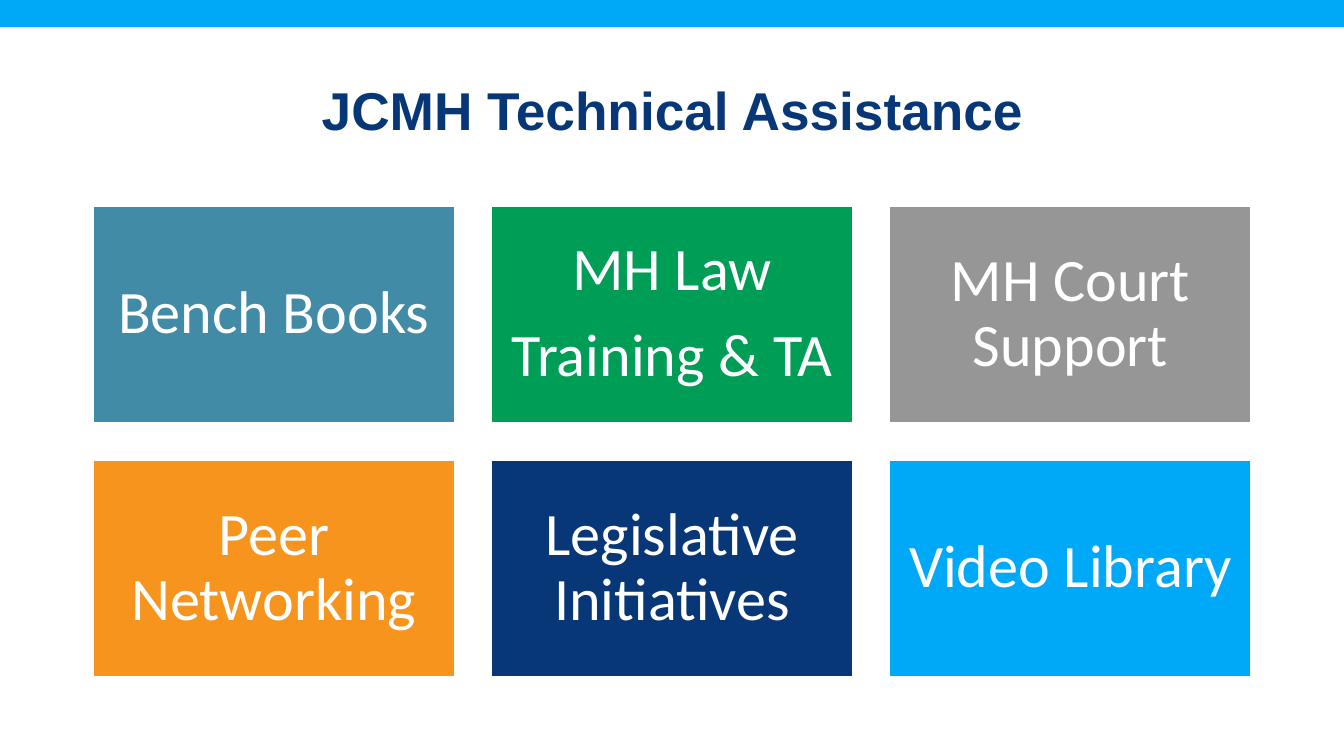
import pptx
import pptx.util
from pptx.dml.color import RGBColor
from pptx.enum.shapes import MSO_SHAPE
from pptx.enum.text import MSO_ANCHOR, MSO_AUTO_SIZE, PP_ALIGN

# Content
HEADING = "JCMH Technical Assistance"
SERVICES = [
    (["Bench Books"], "418BA7"),
    (["MH Law", "Training & TA"], "009D57"),
    (["MH Court Support"], "969696"),
    (["Peer Networking"], "F7941E"),
    (["Legislative Initiatives"], "073776"),
    (["Video Library"], "00A9F8"),
]
NAVY, SKY, WHITE = "073776", "00A9F8", "FFFFFF"

# Layout in inches
SLIDE_W, SLIDE_H = 13.33, 7.5
BAND_H = 0.27
LEFT, TOP = 0.92, 2.04
COLUMNS = 3
TILE_W, TILE_H = 3.59, 2.16
GAP = 0.36
INSET = 0.18


def inches(*lengths):
    return [pptx.util.Inches(length) for length in lengths]


def color(hex_code):
    return RGBColor.from_string(hex_code)


def add_block(slide, box, fill):
    block = slide.shapes.add_shape(MSO_SHAPE.RECTANGLE, *inches(*box))
    block.shadow.inherit = False
    block.fill.solid()
    block.fill.fore_color.rgb = color(fill)
    block.line.fill.background()
    return block


def write(frame, lines, font, size, hex_code, bold=False, after=0):
    frame.word_wrap = True
    frame.auto_size = MSO_AUTO_SIZE.NONE
    frame.vertical_anchor = MSO_ANCHOR.MIDDLE
    frame.text = "\n".join(lines)
    for paragraph in frame.paragraphs:
        paragraph.alignment = PP_ALIGN.CENTER
        paragraph.line_spacing = 0.9
        paragraph.space_after = pptx.util.Pt(after)
        paragraph.font.name = font
        paragraph.font.size = pptx.util.Pt(size)
        paragraph.font.bold = bold
        paragraph.font.color.rgb = color(hex_code)


def main():
    deck = pptx.Presentation()
    deck.slide_width, deck.slide_height = inches(SLIDE_W, SLIDE_H)
    slide = deck.slides.add_slide(deck.slide_layouts[5])

    # Top band and heading
    add_block(slide, (0, 0, SLIDE_W, BAND_H), SKY)
    heading = slide.shapes.title
    heading.left, heading.top, heading.width, heading.height = inches(LEFT, 0.4, 11.5, 1.45)
    write(heading.text_frame, [HEADING], "Arial", 38, NAVY, bold=True)

    # Grid of services
    for index, (lines, fill) in enumerate(SERVICES):
        row, column = divmod(index, COLUMNS)
        x = LEFT + column * (TILE_W + GAP)
        y = TOP + row * (TILE_H + GAP)
        tile = add_block(slide, (x, y, TILE_W, TILE_H), fill)
        tile.line.color.rgb = color(WHITE)
        tile.line.width = pptx.util.Pt(1.5)
        frame = tile.text_frame
        frame.margin_left, frame.margin_top, frame.margin_right, frame.margin_bottom = inches(*[INSET] * 4)
        write(frame, lines, "Calibri", 43, WHITE, after=15)

    deck.save("out.pptx")


if __name__ == "__main__":
    main()
